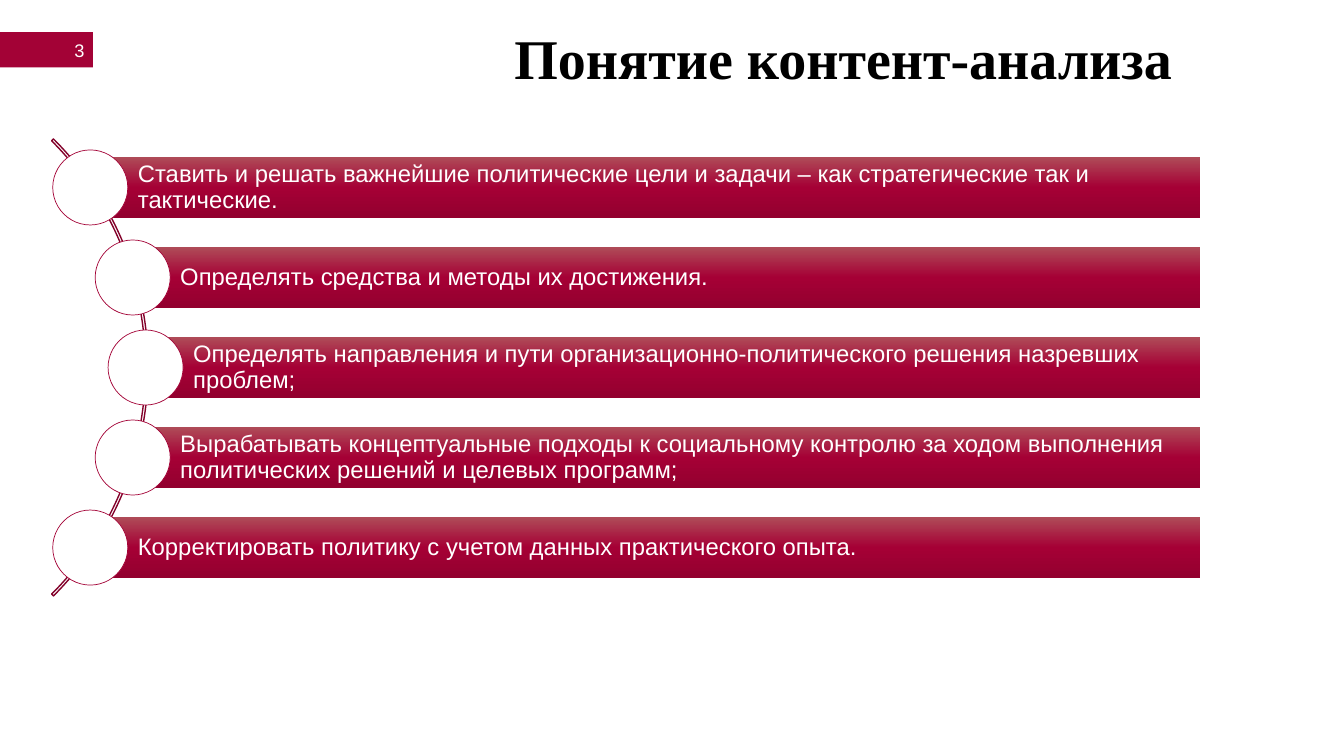
from math import sqrt

from lxml import etree
from pptx import Presentation
from pptx.dml.color import RGBColor
from pptx.enum.shapes import MSO_SHAPE as Preset
from pptx.enum.text import MSO_ANCHOR as Anchor, PP_ALIGN as Align
from pptx.oxml.ns import qn
from pptx.util import Pt

WHITE = RGBColor(0xFF, 0xFF, 0xFF)
BLACK = RGBColor(0x00, 0x00, 0x00)
CRIMSON = RGBColor(0xA3, 0x02, 0x36)
DARK_CRIMSON = RGBColor(0x83, 0x02, 0x2B)
BAR_STOPS = (
    (0, RGBColor(0xAF, 0x4B, 0x58)),
    (50, RGBColor(0xA5, 0x00, 0x35)),
    (100, RGBColor(0x93, 0x00, 0x2F)),
)

TASKS = (
    "Ставить и решать важнейшие политические цели и задачи – как стратегические так и тактические.",
    "Определять средства и методы их достижения.",
    "Определять направления и пути организационно-политического решения назревших проблем;",
    "Вырабатывать концептуальные подходы к социальному контролю за ходом выполнения "
    "политических решений и целевых программ;",
    "Корректировать политику с учетом данных практического опыта.",
)

# Geometry of the curved list, in points
ARC_X, ARC_Y = -125, 262.5
ARC_RADIUS = 230.8
DOT_RADIUS_ON_ARC = 229
ROW_PITCH = 64.3
BAR_HEIGHT = 43
BAR_RIGHT = 857.2
DOT_SIZE = 53.6


class SlideBuilder:
    def __init__(self, slide, font="Arial"):
        self.slide = slide
        self.font = font

    def shape(self, preset, left, top, width, height, fill=None, line=None, line_width=1):
        shape = self.slide.shapes.add_shape(preset, Pt(left), Pt(top), Pt(width), Pt(height))
        shape.shadow.inherit = False
        if fill is None:
            shape.fill.background()
        else:
            shape.fill.solid()
            shape.fill.fore_color.rgb = fill
        if line is None:
            shape.line.fill.background()
        else:
            shape.line.color.rgb = line
            shape.line.width = Pt(line_width)
        return shape

    def gradient(self, shape, stops):
        """Fill the shape from top to bottom with the given stops."""
        shape.fill.gradient()
        shape.fill.gradient_angle = 270
        stop_list = shape.element.spPr.find(qn("a:gradFill")).find(qn("a:gsLst"))
        for stop in list(stop_list):
            stop_list.remove(stop)
        for percent, color in stops:
            stop = etree.SubElement(stop_list, qn("a:gs"), pos=str(percent * 1000))
            etree.SubElement(stop, qn("a:srgbClr"), val=str(color))

    def label(self, shape, text, size, color, align=Align.LEFT, anchor=Anchor.MIDDLE,
              margins=(0, 0, 0, 0), spacing=None, font=None, bold=False):
        frame = shape.text_frame
        frame.text = text
        frame.word_wrap = True
        frame.vertical_anchor = anchor
        (frame.margin_left, frame.margin_top,
         frame.margin_right, frame.margin_bottom) = map(Pt, margins)
        paragraph = frame.paragraphs[0]
        paragraph.alignment = align
        paragraph.line_spacing = spacing
        run_font = paragraph.runs[0].font
        run_font.name = font or self.font
        run_font.size = Pt(size)
        run_font.bold = bold
        run_font.color.rgb = color

    def title(self, text, left, top, width, height):
        box = self.slide.shapes.add_textbox(Pt(left), Pt(top), Pt(width), Pt(height))
        self.label(box, text, 40, BLACK, Align.CENTER, Anchor.TOP,
                   spacing=0.9, font="Times New Roman", bold=True)

    def page_tag(self, number):
        tag = self.shape(Preset.RECTANGLE, 0, 23, 66.4, 25.2, fill=CRIMSON)
        self.label(tag, number, 13, WHITE, Align.RIGHT, margins=(6, 0, 6, 0))

    def arc(self):
        arc = self.shape(Preset.BLOCK_ARC, ARC_X - ARC_RADIUS, ARC_Y - ARC_RADIUS,
                         2 * ARC_RADIUS, 2 * ARC_RADIUS, line=DARK_CRIMSON)
        for index, value in enumerate((189, 27, 0.004)):
            arc.adjustments[index] = value

    def task(self, text, offset):
        """Draw a bar and its dot, the dot centred on the arc."""
        x = ARC_X + sqrt(DOT_RADIUS_ON_ARC ** 2 - offset ** 2)
        y = ARC_Y + offset
        bar = self.shape(Preset.RECTANGLE, x, y - BAR_HEIGHT / 2, BAR_RIGHT - x, BAR_HEIGHT)
        self.gradient(bar, BAR_STOPS)
        self.label(bar, text, 17, WHITE, margins=(34, 3.6, 3.6, 3.6), spacing=0.9)
        self.shape(Preset.OVAL, x - DOT_SIZE / 2, y - DOT_SIZE / 2, DOT_SIZE, DOT_SIZE,
                   fill=WHITE, line=CRIMSON, line_width=0.5)


def main():
    presentation = Presentation()
    presentation.slide_width, presentation.slide_height = Pt(960), Pt(540)
    builder = SlideBuilder(presentation.slides.add_slide(presentation.slide_layouts[6]))

    # Header
    builder.page_tag("3")
    builder.title("Понятие контент-анализа", 287.7, 22.3, 629.3, 62)

    # Curved list
    builder.arc()
    middle = (len(TASKS) - 1) / 2
    for row, text in enumerate(TASKS):
        builder.task(text, (row - middle) * ROW_PITCH)

    presentation.save("out.pptx")


if __name__ == "__main__":
    main()
